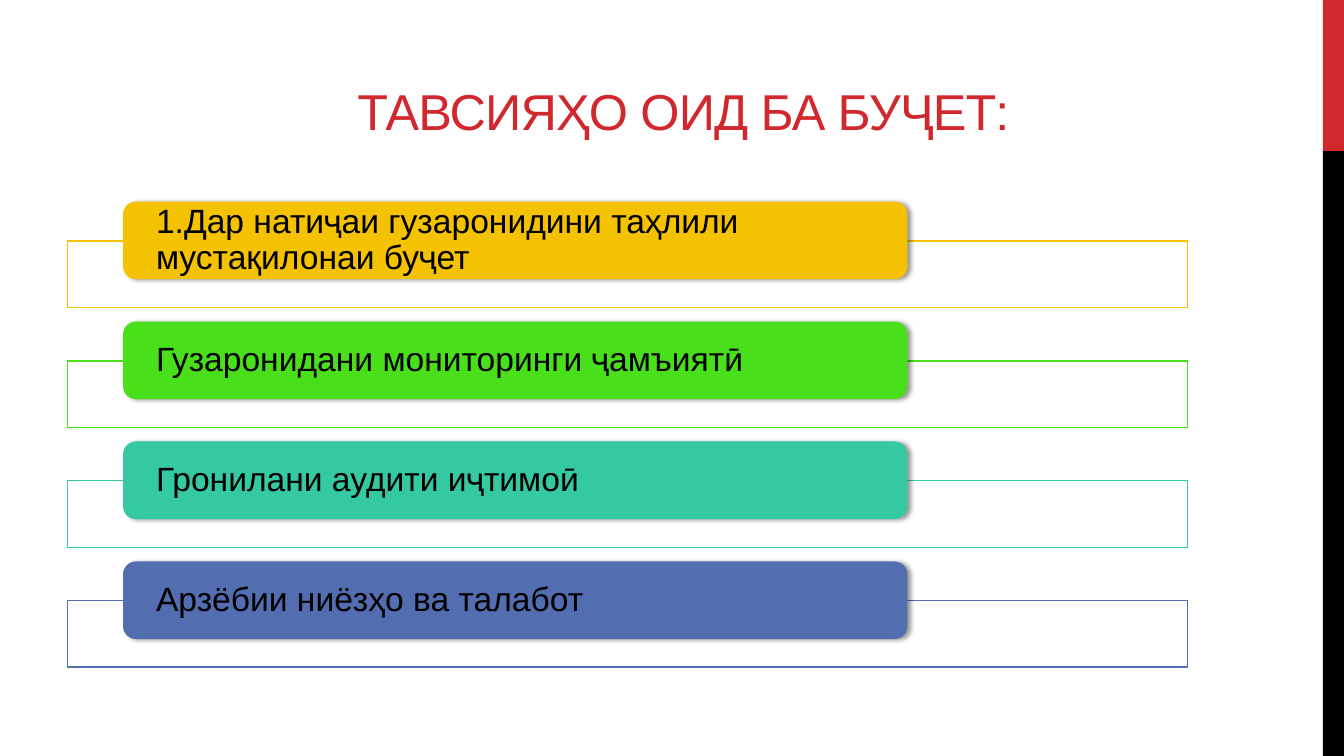
"""Build a slide with four budget recommendations in coloured bars."""
from lxml import etree
from pptx import Presentation
from pptx.dml.color import RGBColor
from pptx.enum.shapes import MSO_SHAPE
from pptx.enum.text import MSO_ANCHOR, PP_ALIGN
from pptx.oxml.ns import qn
from pptx.util import Inches, Pt

RECT, ROUND = MSO_SHAPE.RECTANGLE, MSO_SHAPE.ROUNDED_RECTANGLE
LEFT, CENTER = PP_ALIGN.LEFT, PP_ALIGN.CENTER
MIDDLE, BOTTOM = MSO_ANCHOR.MIDDLE, MSO_ANCHOR.BOTTOM

COLORS = {
    "red": "D1282E",
    "black": "000000",
    "white": "FFFFFF",
    "gold": "F5C201",
    "green": "49DF1B",
    "teal": "35C9A2",
    "blue": "526DB0",
}
ITEMS = [
    ("gold", "Дар натиҷаи гузаронидини таҳлили мустақилонаи буҷет"),
    ("green", "Гузаронидани мониторинги ҷамъиятӣ"),
    ("teal", "Гронилани аудити иҷтимоӣ"),
    ("blue", "Арзёбии ниёзҳо ва талабот"),
]
TOP, STEP = 2, 1.19

deck = Presentation()
deck.slide_width, deck.slide_height = Inches(13.33), Inches(7.5)
slide = deck.slides.add_slide(deck.slide_layouts[6])


def add_box(kind, x, y, w, h, fill, line=None):
    box = slide.shapes.add_shape(kind, Inches(x), Inches(y), Inches(w), Inches(h))
    box.shadow.inherit = False
    box.fill.solid()
    box.fill.fore_color.rgb = RGBColor.from_string(COLORS[fill])
    if line:
        box.line.color.rgb = RGBColor.from_string(COLORS[line])
        box.line.width = Pt(1)
    else:
        box.line.fill.background()
    return box


def put_text(shape, text, size=24, color="black", align=LEFT, anchor=MIDDLE,
             side=0.29, edge=0, lead=0.9):
    frame = shape.text_frame
    frame.word_wrap = True
    frame.vertical_anchor = anchor
    frame.margin_left = frame.margin_right = Inches(side)
    frame.margin_top = frame.margin_bottom = Inches(edge)
    para = frame.paragraphs[0]
    para.alignment, para.line_spacing = align, lead
    run = para.add_run()
    run.text = text
    run.font.name, run.font.size = "Arial", Pt(size)
    run.font.color.rgb = RGBColor.from_string(COLORS[color])
    return para


add_box(RECT, 13.12, 0, 0.21, 1.5, "red")
add_box(RECT, 13.12, 1.5, 0.21, 6, "black")

title = slide.shapes.add_textbox(Inches(2.56), Inches(0.26), Inches(8.44), Inches(1.18))
head = put_text(title, "ТАВСИЯҲО ОИД БА БУҶЕТ:", size=36, color="red", align=CENTER,
                anchor=BOTTOM, side=0.1, edge=0.05, lead=1.0)
head.runs[0].font._element.set("spc", "-60")

for i, (color, text) in enumerate(ITEMS):
    y = TOP + i * STEP
    frame = add_box(RECT, 0.67, y + 0.39, 11.11, 0.66, "white", line=color)
    tint = frame._element.spPr.find(qn("a:solidFill"))[0]
    etree.SubElement(tint, qn("a:alpha"), val="90000")

    label = add_box(ROUND, 1.22, y, 7.78, 0.77, color)
    glow = etree.SubElement(
        label._element.spPr.find(qn("a:effectLst")), qn("a:outerShdw"),
        blurRad=str(Pt(3.1)), dist=str(Pt(1.8)), dir="0", rotWithShape="0")
    shade = etree.SubElement(glow, qn("a:srgbClr"), val=COLORS["black"])
    etree.SubElement(shade, qn("a:alpha"), val="40000")

    para = put_text(label, text)
    if i == 0:
        props = para._p.get_or_add_pPr()
        props.set("marL", "0")
        props.set("indent", "0")
        etree.SubElement(props, qn("a:buFont"), typeface="+mj-lt")
        etree.SubElement(props, qn("a:buAutoNum"), type="arabicPeriod")

deck.save("out.pptx")
